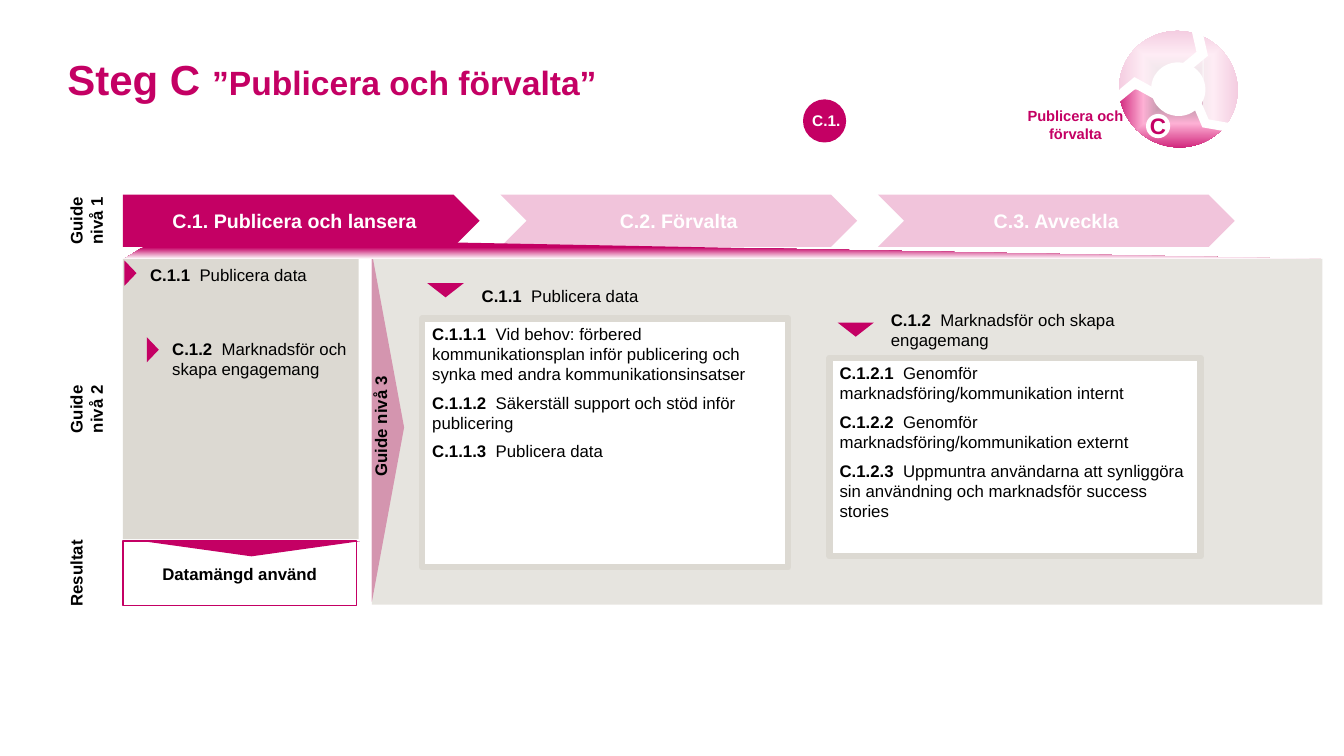
"""Build the slide for step C, publish and manage, with its guide levels and result."""
from lxml.etree import SubElement
from pptx import Presentation
from pptx.dml.color import RGBColor
from pptx.enum.shapes import MSO_SHAPE
from pptx.enum.text import MSO_ANCHOR, PP_ALIGN
from pptx.oxml.ns import qn
from pptx.util import Pt

MAGENTA = RGBColor(0xC4, 0x00, 0x64)
RING_EDGE = RGBColor(0xC5, 0x03, 0x66)
RING_PINK = RGBColor(0xFD, 0xB0, 0xD4)
GREY = RGBColor(0x80, 0x80, 0x80)
SAND = RGBColor(0xDC, 0xD9, 0xD2)
WHITE = RGBColor(0xFF, 0xFF, 0xFF)
BLACK = RGBColor(0, 0, 0)

TITLE = [("Steg C ", 30), ("”Publicera och förvalta”", 24)]
STEPS = ["C.1. Publicera och lansera", "C.2. Förvalta", "C.3. Avveckla"]
STEP_LEFT, STEP_TOP, STEP_W, STEP_H, STEP_PITCH = 87.8, 139, 254.9, 37.4, 269.65
RING_GAPS = [
    ((802.8, 51.1, 16.6, 24.5), 264.7),
    ((846, 23, 17.3, 28.1), 18.7),
    ((856.1, 72, 14.4, 26.6), 128.4),
]
RING_VEILS = [(859, 17.3, 74.2, 70.6), (776.2, 13.7, 83.5, 50.4)]
SIDE_LABELS = [
    (["Guide nivå 1"], (33.8, 141.8, 58.3, 31.7)),
    (["Guide", "nivå 2"], (13, 276.5, 100, 31.7)),
    (["Resultat"], (26.6, 393.8, 72.7, 31.7)),
    (["Guide nivå 3"], (166.3, 295.9, 213.8, 17.3)),
]
ACTIVITIES = [
    ("C.1.1  ", "Publicera data", (100.1, 185.8, 149.8, 36), (84.2, 190.8)),
    ("C.1.2  ", "Marknadsför och skapa engagemang", (115.9, 238.3, 142.6, 36), (100.1, 245.5)),
]
DETAILS = [
    ("C.1.2  ", "Marknadsför och skapa engagemang",
     (629.3, 221, 226.1, 29.5), (598.3, 230.4), (592.6, 255.6, 265, 141.8),
     [("C.1.2.1  ", "Genomför marknadsföring/kommunikation internt"),
      ("C.1.2.2  ", "Genomför marknadsföring/kommunikation externt"),
      ("C.1.2.3  ", "Uppmuntra användarna att synliggöra sin användning "
                    "och marknadsför success stories")]),
    ("C.1.1  ", "Publicera data",
     (337, 198, 146.2, 25.9), (305.3, 202.3), (301.7, 227.5, 261.4, 177.8),
     [("C.1.1.1  ", "Vid behov: förbered kommunikationsplan inför publicering "
                    "och synka med andra kommunikationsinsatser"),
      ("C.1.1.2  ", "Säkerställ support och stöd inför publicering"),
      ("C.1.1.3  ", "Publicera data")]),
]


def bold(text, size=12, color=BLACK):
    return text, size, color, True


def entry(code, text):
    return [bold(code), (text, 12, BLACK, False)]


def write(sp, paragraphs, align=PP_ALIGN.LEFT, anchor=MSO_ANCHOR.TOP, inset=True, gap=0):
    tf = sp.text_frame
    tf.word_wrap = True
    tf.vertical_anchor = anchor
    if not inset:
        tf.margin_left = tf.margin_right = tf.margin_top = tf.margin_bottom = 0
    for i, runs in enumerate(paragraphs):
        p = tf.add_paragraph() if i else tf.paragraphs[0]
        p.alignment = align
        if i and gap:
            p.space_before = Pt(gap)
        for text, size, color, is_bold in runs:
            r = p.add_run()
            r.text = text
            r.font.name = "Arial"
            r.font.size = Pt(size)
            r.font.bold = is_bold
            r.font.color.rgb = color


def style(sp, fill, line=None, width=1, alpha=None):
    sp.shadow.inherit = False
    if fill is None:
        sp.fill.background()
    else:
        sp.fill.solid()
        sp.fill.fore_color.rgb = fill
    if line is None:
        sp.line.fill.background()
    else:
        sp.line.color.rgb = line
        sp.line.width = Pt(width)
    if alpha is not None:
        color = sp._element.spPr.find(qn("a:solidFill"))[0]
        SubElement(color, qn("a:alpha"), val=str(alpha * 1000))


def shape(s, kind, box, fill, rotation=0, **look):
    sp = s.shapes.add_shape(kind, *map(Pt, box))
    sp.rotation = rotation
    style(sp, fill, **look)
    return sp


def textbox(s, box, paragraphs, rotation=0, **layout):
    sp = s.shapes.add_textbox(*map(Pt, box))
    sp.rotation = rotation
    write(sp, paragraphs, **layout)


def gradient(sp, stops, radial=False):
    sp.fill.gradient()
    grad = sp._element.spPr.find(qn("a:gradFill"))
    for child in list(grad):
        grad.remove(child)
    stop_list = SubElement(grad, qn("a:gsLst"))
    for position, color in stops:
        stop = SubElement(stop_list, qn("a:gs"), pos=str(position * 1000))
        SubElement(stop, qn("a:srgbClr"), val=str(color))
    if radial:
        path = SubElement(grad, qn("a:path"), {"path": "shape"})
        SubElement(path, qn("a:fillToRect"), dict.fromkeys("ltrb", "50000"))
    else:
        SubElement(grad, qn("a:lin"), ang="5400000", scaled="0")


def add_ring(s):
    ring = shape(s, MSO_SHAPE.OVAL, (799.2, 22.3, 85, 82.8), WHITE, 22.7)
    gradient(ring, [(1, GREY), (45, RING_PINK), (85, RING_EDGE)], radial=True)
    shape(s, MSO_SHAPE.OVAL, (822.2, 44.6, 38.9, 38.2), WHITE, 22.7)
    for box, rotation in RING_GAPS:
        shape(s, MSO_SHAPE.CHEVRON, box, WHITE, rotation)
    letter = shape(s, MSO_SHAPE.OVAL, (818.6, 81.4, 17.3, 17.3), WHITE)
    write(letter, [[bold("C", 16, MAGENTA)]], PP_ALIGN.CENTER, MSO_ANCHOR.MIDDLE, inset=False)
    textbox(s, (723.6, 69.1, 89.3, 40.3), [[bold("Publicera och förvalta", 10.5, MAGENTA)]],
            align=PP_ALIGN.CENTER, anchor=MSO_ANCHOR.MIDDLE)
    for box in RING_VEILS:
        shape(s, MSO_SHAPE.RECTANGLE, box, WHITE, alpha=77)


def add_step(s, index):
    kind = MSO_SHAPE.CHEVRON if index else MSO_SHAPE.PENTAGON
    box = (STEP_LEFT + index * STEP_PITCH, STEP_TOP, STEP_W, STEP_H)
    sp = shape(s, kind, box, MAGENTA)
    write(sp, [[bold(STEPS[index], 14, WHITE)]], PP_ALIGN.CENTER, MSO_ANCHOR.MIDDLE)


def add_details(s):
    shape(s, MSO_SHAPE.ISOSCELES_TRIANGLE, (152.6, 293.8, 249.1, 23), MAGENTA, 90)
    shape(s, MSO_SHAPE.RECTANGLE, (265.7, 185, 679, 247), SAND, alpha=69)
    for code, text, heading, marker, box, items in DETAILS:
        textbox(s, heading, [entry(code, text)], anchor=MSO_ANCHOR.MIDDLE)
        card = shape(s, MSO_SHAPE.RECTANGLE, box, WHITE, line=SAND, width=4.5)
        write(card, [entry(*item) for item in items], gap=6)
        shape(s, MSO_SHAPE.ISOSCELES_TRIANGLE, (*marker, 25.9, 10.1), MAGENTA, 180)


def add_activities(s):
    shape(s, MSO_SHAPE.RECTANGLE, (87.8, 185, 168.5, 200.2), SAND)
    for code, text, box, marker in ACTIVITIES:
        shape(s, MSO_SHAPE.ISOSCELES_TRIANGLE, (*marker, 18, 8.6), MAGENTA, 90)
        textbox(s, box, [entry(code, text)])


def add_result(s):
    result = shape(s, MSO_SHAPE.RECTANGLE, (87.8, 386.6, 167, 46.1), None, line=MAGENTA)
    write(result, [[bold("Datamängd använd")]], PP_ALIGN.CENTER, MSO_ANCHOR.MIDDLE)
    shape(s, MSO_SHAPE.ISOSCELES_TRIANGLE, (102.2, 386.6, 154.8, 10.8), MAGENTA, 180)


def add_beam(s):
    builder = s.shapes.build_freeform(Pt(88.6), Pt(185))
    builder.add_line_segments([(Pt(113.8), Pt(169.2)), (Pt(943.9), Pt(185))], close=True)
    beam = builder.convert_to_shape()
    style(beam, MAGENTA)
    gradient(beam, [(48, MAGENTA), (100, WHITE)])


def main():
    prs = Presentation()
    prs.slide_width, prs.slide_height = Pt(960), Pt(540)
    s = prs.slides.add_slide(prs.slide_layouts[6])
    textbox(s, (48.2, 38, 750, 65.5), [[bold(text, size, MAGENTA) for text, size in TITLE]],
            inset=False)
    add_ring(s)
    shape(s, MSO_SHAPE.OVAL, (574.6, 72, 28.8, 28.8), MAGENTA, line=MAGENTA, width=2)
    textbox(s, (573.1, 75.6, 43.2, 20.9), [[bold("C.1.", 11, WHITE)]])
    add_details(s)
    add_result(s)
    for index in (1, 2):
        add_step(s, index)
    shape(s, MSO_SHAPE.RECTANGLE, (349.9, 135.4, 581.8, 46.8), WHITE, alpha=77)
    add_activities(s)
    add_beam(s)
    add_step(s, 0)
    for lines, box in SIDE_LABELS:
        textbox(s, box, [[bold(line)] for line in lines], 270,
                align=PP_ALIGN.CENTER, inset=False)
    prs.save("out.pptx")


if __name__ == "__main__":
    main()
